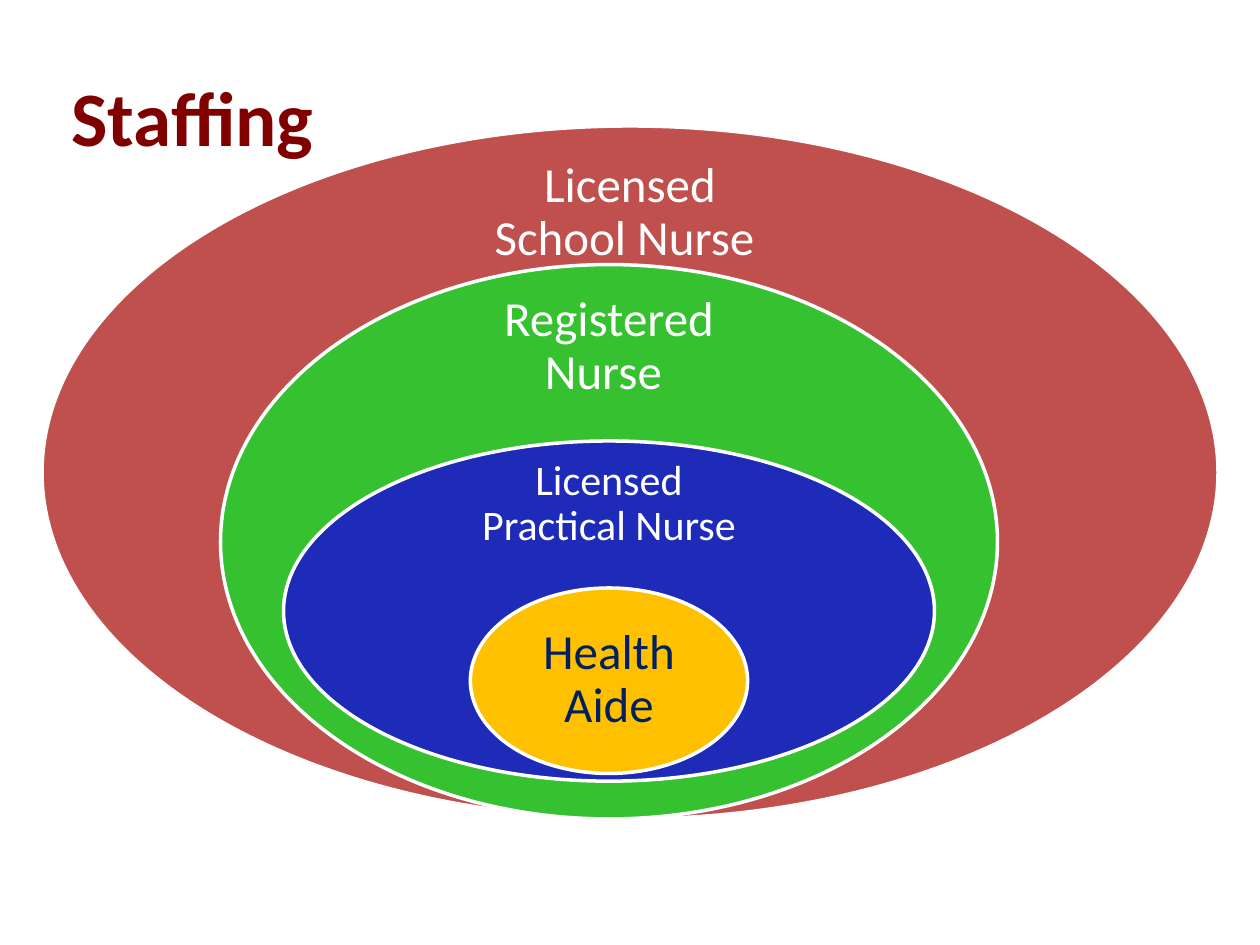
import pptx
import pptx.dml.color
import pptx.enum.shapes
import pptx.enum.text
import pptx.util

Pt = pptx.util.Pt
FONT = "Calibri"
TITLE = "Staffing "
WHITE = "FFFFFF"

ROLES = [
    dict(name="Licensed School Nurse ", fill="C0504D", color=WHITE, size=28, inset=16,
         center=360, oval=(72, 672, 396), label=(92.2, 188, 59)),
    dict(name="Registered Nurse ", fill="35C130", color=WHITE, size=28, inset=16,
         center=348, oval=(151.2, 444, 316.8), label=(170, 155.6, 57)),
    dict(name="Licensed Practical Nurse ", fill="1D2BB8", color=WHITE, size=24, inset=13.6,
         center=348, oval=(252, 372, 194.4), label=(266.4, 173.6, 44)),
    dict(name="Health Aide", fill="FFC000", color="002060", size=28, inset=16,
         center=348, oval=(336, 158.4, 106), label=(362.2, 112.4, 52.6)),
]


def rgb(value):
    return pptx.dml.color.RGBColor.from_string(value)


def centered(center, top, width, height):
    return [Pt(value) for value in (center - width / 2, top, width, height)]


def write(box, text, size, color, bold=False):
    frame = box.text_frame
    frame.text = text
    frame.word_wrap = True
    frame.auto_size = pptx.enum.text.MSO_AUTO_SIZE.NONE
    frame.vertical_anchor = pptx.enum.text.MSO_ANCHOR.MIDDLE
    para = frame.paragraphs[0]
    para.alignment = pptx.enum.text.PP_ALIGN.CENTER
    font = para.runs[0].font
    font.name, font.size, font.bold = FONT, Pt(size), bold
    font.color.rgb = rgb(color)
    return frame


def add_oval(page, role):
    oval = page.shapes.add_shape(pptx.enum.shapes.MSO_SHAPE.OVAL,
                                 *centered(role["center"], *role["oval"]))
    oval.shadow.inherit = False
    oval.fill.solid()
    oval.fill.fore_color.rgb = rgb(role["fill"])
    oval.line.color.rgb = rgb(WHITE)
    oval.line.width = Pt(2)


def add_label(page, role):
    box = page.shapes.add_textbox(*centered(role["center"], *role["label"]))
    frame = write(box, role["name"], role["size"], role["color"])
    frame.margin_left = frame.margin_right = Pt(role["inset"])
    frame.margin_top = frame.margin_bottom = Pt(role["inset"])
    frame.paragraphs[0].line_spacing = 0.9


def main():
    deck = pptx.Presentation()
    deck.slide_width, deck.slide_height = Pt(720), Pt(540)
    page = deck.slides.add_slide(deck.slide_layouts[5])
    title = page.shapes.title
    title.left, title.top, title.width, title.height = centered(115, 41.8, 166.4, 48.2)
    write(title, TITLE, 44, "800000", bold=True)
    for role in ROLES:
        add_oval(page, role)
        add_label(page, role)
    deck.save("out.pptx")


if __name__ == "__main__":
    main()
